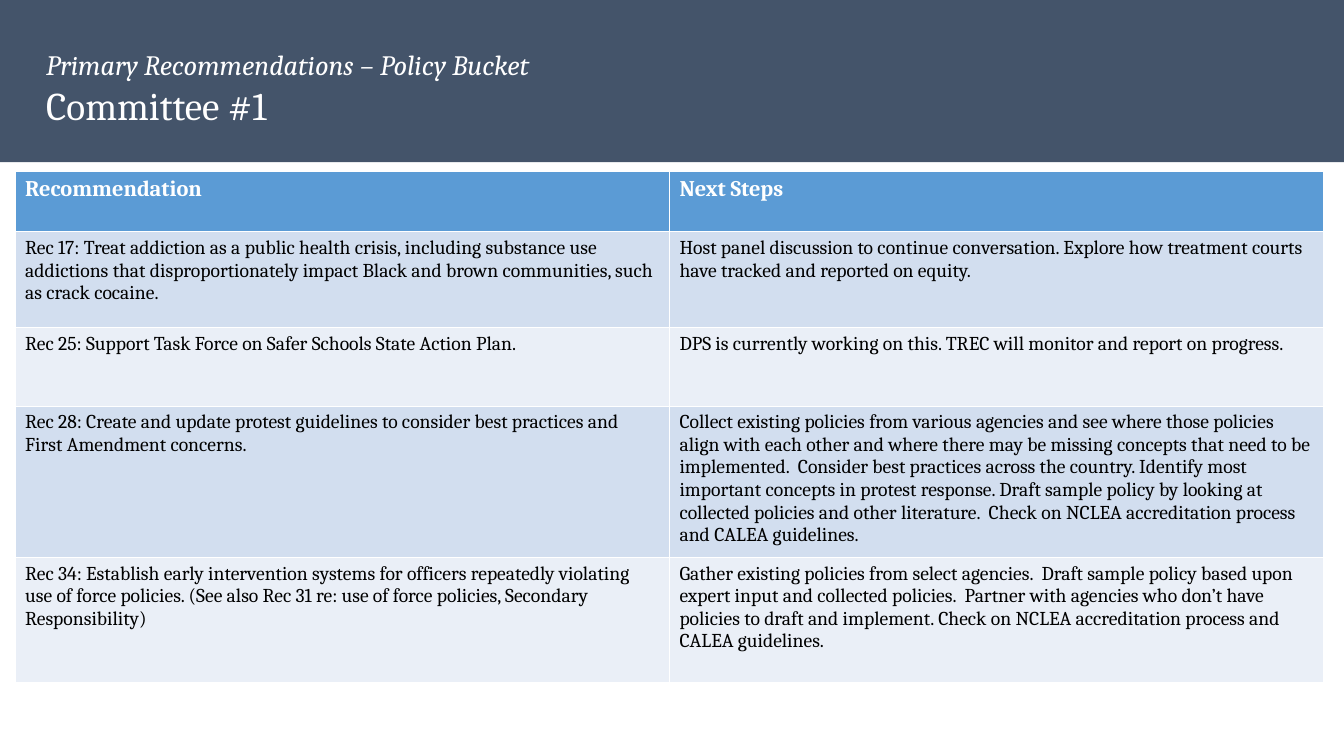
"""Build the policy recommendations slide for Committee #1."""
from pptx import Presentation
from pptx.dml.color import RGBColor
from pptx.enum.shapes import MSO_SHAPE
from pptx.enum.text import MSO_AUTO_SIZE
from pptx.util import Inches, Pt

TITLE_LINES = [
    ("Primary Recommendations – Policy Bucket", 20, True),
    ("Committee #1", 28, False),
]
TABLE_ROWS = [
    ("Recommendation", "Next Steps"),
    (
        "Rec 17: Treat addiction as a public health crisis, including substance use "
        "addictions that disproportionately impact Black and brown communities, such "
        "as crack cocaine.",
        "Host panel discussion to continue conversation. Explore how treatment courts "
        "have tracked and reported on equity.",
    ),
    (
        "Rec 25: Support Task Force on Safer Schools State Action Plan.",
        "DPS is currently working on this. TREC will monitor and report on progress.",
    ),
    (
        "Rec 28: Create and update protest guidelines to consider best practices and "
        "First Amendment concerns.",
        "Collect existing policies from various agencies and see where those policies "
        "align with each other and where there may be missing concepts that need to be "
        "implemented.  Consider best practices across the country. Identify most "
        "important concepts in protest response. Draft sample policy by looking at "
        "collected policies and other literature.  Check on NCLEA accreditation process "
        "and CALEA guidelines.",
    ),
    (
        "Rec 34: Establish early intervention systems for officers repeatedly violating "
        "use of force policies. (See also Rec 31 re: use of force policies, Secondary "
        "Responsibility)",
        "Gather existing policies from select agencies.  Draft sample policy based upon "
        "expert input and collected policies.  Partner with agencies who don’t have "
        "policies to draft and implement. Check on NCLEA accreditation process and "
        "CALEA guidelines.",
    ),
]
ROW_HEIGHTS = [0.6, 0.95, 0.78, 1.5, 1.24]
COLUMN_WIDTH = 6.49

FONT = "Cambria"
WHITE = RGBColor(0xFF, 0xFF, 0xFF)
BLACK = RGBColor(0x00, 0x00, 0x00)
SLATE = RGBColor(0x44, 0x54, 0x6A)
HEADER_BLUE = RGBColor(0x5B, 0x9B, 0xD5)
BAND_COLOURS = [RGBColor(0xEA, 0xEF, 0xF7), RGBColor(0xD2, 0xDE, 0xEF)]


def format_paragraph(paragraph, size, colour, bold=False, italic=False):
    """Apply the slide font to every run of a paragraph."""
    for run in paragraph.runs:
        run.font.name = FONT
        run.font.size = Pt(size)
        run.font.color.rgb = colour
        run.font.bold = bold
        run.font.italic = italic


def add_title(slide, slide_width):
    """Add the dark band and the two title lines."""
    band = slide.shapes.add_shape(MSO_SHAPE.RECTANGLE, 0, 0, slide_width, Inches(1.61))
    band.shadow.inherit = False
    band.fill.solid()
    band.fill.fore_color.rgb = SLATE
    band.line.fill.background()

    title = slide.shapes.add_textbox(Inches(0.36), Inches(0.42), Inches(5.74), Inches(0.91))
    text_frame = title.text_frame
    text_frame.text = "\n".join(text for text, _, _ in TITLE_LINES)
    text_frame.word_wrap = False
    text_frame.auto_size = MSO_AUTO_SIZE.SHAPE_TO_FIT_TEXT
    for paragraph, (_, size, italic) in zip(text_frame.paragraphs, TITLE_LINES):
        format_paragraph(paragraph, size, WHITE, italic=italic)


def add_recommendations(slide):
    """Add the table of recommendations and next steps."""
    column_count = len(TABLE_ROWS[0])
    table = slide.shapes.add_table(
        len(TABLE_ROWS), column_count, Inches(0.15), Inches(1.7),
        Inches(COLUMN_WIDTH * column_count), Inches(sum(ROW_HEIGHTS)),
    ).table
    for column in table.columns:
        column.width = Inches(COLUMN_WIDTH)
    for row_index, (texts, height) in enumerate(zip(TABLE_ROWS, ROW_HEIGHTS)):
        is_header = row_index == 0
        table.rows[row_index].height = Inches(height)
        for cell, text in zip(table.rows[row_index].cells, texts):
            cell.text_frame.text = text
            cell.fill.solid()
            cell.fill.fore_color.rgb = HEADER_BLUE if is_header else BAND_COLOURS[row_index % 2]
            format_paragraph(
                cell.text_frame.paragraphs[0],
                16 if is_header else 14,
                WHITE if is_header else BLACK,
                bold=is_header,
            )


def main():
    """Create and save the presentation."""
    presentation = Presentation()
    presentation.slide_width = Inches(13.33)
    presentation.slide_height = Inches(7.5)
    slide = presentation.slides.add_slide(presentation.slide_layouts[6])
    add_title(slide, presentation.slide_width)
    add_recommendations(slide)
    presentation.save("out.pptx")


if __name__ == "__main__":
    main()
